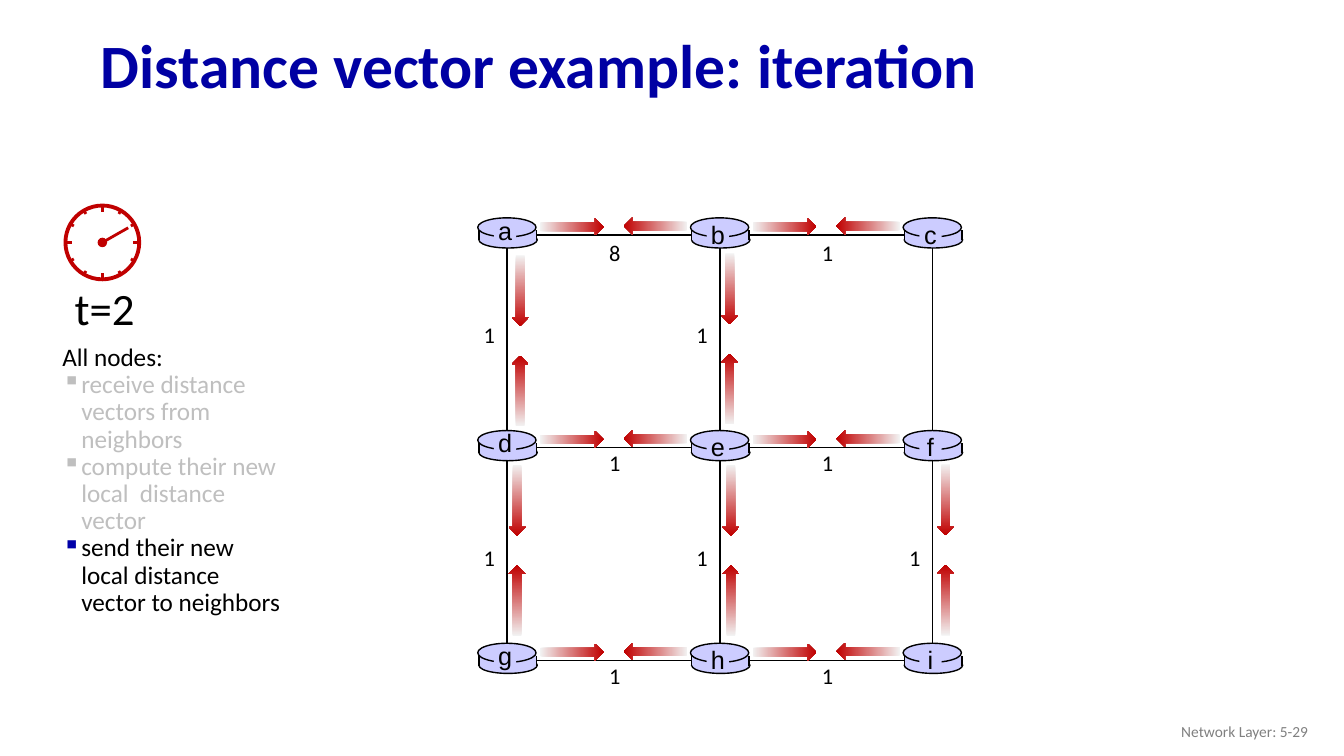
from math import cos, radians, sin

from lxml import etree
from pptx import Presentation
from pptx.dml.color import RGBColor
from pptx.enum.shapes import MSO_CONNECTOR, MSO_SHAPE, MSO_SHAPE_TYPE
from pptx.enum.text import MSO_ANCHOR, MSO_AUTO_SIZE, PP_ALIGN
from pptx.oxml.ns import qn
from pptx.util import Cm, Pt

BLACK = RGBColor(0, 0, 0)
NAVY = RGBColor(0x00, 0x00, 0xA3)
BLUE = RGBColor(0x00, 0x00, 0xA8)
RED = RGBColor(0xC0, 0x00, 0x00)
LILAC = RGBColor(0xCC, 0xCC, 0xFF)
PALE = RGBColor(0xF2, 0xF2, 0xF2)
SILVER = RGBColor(0xBF, 0xBF, 0xBF)
GRAY = RGBColor(0x80, 0x80, 0x80)

prs = Presentation()
prs.slide_width, prs.slide_height = Cm(33.87), Cm(19.05)
s = prs.slides.add_slide(prs.slide_layouts[5])


def write(p, text, size=18, font="Calibri", color=BLACK, bold=False,
          align=PP_ALIGN.LEFT, spacing=None):
    p.alignment = align
    p.line_spacing = spacing
    r = p.add_run()
    r.text = text
    r.font.size = Pt(size)
    r.font.name = font
    r.font.bold = bold
    r.font.color.rgb = color


def draw(kind, x, y, w, h, fill=None, line=None, width=1):
    sp = s.shapes.add_shape(kind, Cm(x), Cm(y), Cm(w), Cm(h))
    sp.shadow.inherit = False
    if fill is None:
        sp.fill.background()
    else:
        sp.fill.solid()
        sp.fill.fore_color.rgb = fill
    if line is None:
        sp.line.fill.background()
    else:
        sp.line.color.rgb = line
        sp.line.width = Pt(width)
    return sp


title = s.shapes.title
title.left, title.top, title.width, title.height = Cm(2.29), Cm(0.48), Cm(29.21), Cm(2.49)
tf = title.text_frame
tf.auto_size = MSO_AUTO_SIZE.NONE
tf.vertical_anchor = MSO_ANCHOR.MIDDLE
for text, color in (("Distance vector example: ", NAVY), ("iteration", BLUE)):
    write(tf.paragraphs[0], text, size=44, color=color, bold=True, spacing=0.9)

LEFT, TOP, PITCH = 12.78, 5.92, 5.36
cols = [LEFT + PITCH * i for i in range(3)]
rows = [TOP + PITCH * i for i in range(3)]

frame = draw(MSO_SHAPE.RECTANGLE, LEFT, TOP, 2 * PITCH, 2 * PITCH, line=BLACK)
for start, end in ((2, 0), (1, 3)):
    link = s.shapes.add_connector(MSO_CONNECTOR.STRAIGHT, 0, 0, 0, 0)
    link.begin_connect(frame, start)
    link.end_connect(frame, end)
    link.line.color.rgb = BLACK
    link.line.width = Pt(1)

strokes = []
labels = []
for i, name in enumerate("abcdefghi"):
    x, y = cols[i % 3], rows[i // 3]
    draw(MSO_SHAPE.OVAL, x - 0.71, y - 0.08, 1.47, 0.41, LILAC, BLACK)
    draw(MSO_SHAPE.RECTANGLE, x - 0.71, y - 0.12, 1.45, 0.25, LILAC)
    draw(MSO_SHAPE.OVAL, x - 0.74, y - 0.43, 1.47, 0.48, LILAC, BLACK)
    draw(MSO_SHAPE.RECTANGLE, x - 0.33, y - 0.3, 0.56, 0.51, LILAC)
    for side in (x - 0.71, x + 0.74):
        strokes.append((side, y - 0.12, side, y + 0.14, BLACK, 1))
    lift = 0.63 if i % 3 == 0 else 0.53
    labels.append((name, x - 0.48, y - lift, 0.86, 1.02,
                   dict(font="Arial", align=PP_ALIGN.CENTER)))

arrows = []
for j, y in enumerate(rows):
    for i, x in enumerate(cols[:2]):
        arrows += [(x + 1.63, y - 0.2, 1.6, 0), (x + 3.74, y - 0.22, 1.6, 180)]
        cost = "8" if i == j == 0 else "1"
        labels.append((cost, x + 2.32, y - (0.02 if j == 0 else 0.09), 0.84, 0.94, dict(size=16)))

for i, j, dx, dy in ((0, 0, 0.33, 1.41), (1, 0, 0.25, 1.36), (0, 1, 0.25, 1.33),
                     (1, 1, 0.28, 1.33), (2, 1, 0.33, 1.32)):
    x, y = cols[i], rows[j]
    arrows += [(x + dx, y + dy, 1.78, 90), (x + dx, y + dy + 2.53, 1.78, 270)]
    labels.append(("1", x - 0.84, y + (2.06 if j == 0 else 2.3), 0.84, 0.94, dict(size=16)))

for x, y, length, angle in arrows:
    arrow = draw(MSO_SHAPE.RIGHT_ARROW, x - length / 2, y - 0.22, length, 0.43)
    arrow.rotation = angle
    arrow.fill.gradient()
    arrow.fill.gradient_angle = 0
    for stop, color in zip(arrow.fill.gradient_stops, (PALE, RED)):
        stop.color.rgb = color

CX, CY = 2.58, 6.11
draw(MSO_SHAPE.OVAL, CX - 0.93, CY - 0.93, 1.86, 1.86, line=RED, width=2.75)
draw(MSO_SHAPE.OVAL, CX - 0.12, CY - 0.12, 0.24, 0.24, RED)
for angle in range(0, 360, 30):
    inner = 0.77 if angle % 90 == 0 else 0.83
    c, d = cos(radians(angle)), sin(radians(angle))
    strokes.append((CX + inner * c, CY + inner * d, CX + 0.95 * c, CY + 0.95 * d, RED, 2))
strokes.append((3.23, 5.74, CX, CY, RED, 2))

for x1, y1, x2, y2, color, width in strokes:
    link = s.shapes.add_connector(MSO_CONNECTOR.STRAIGHT, Cm(x1), Cm(y1), Cm(x2), Cm(y2))
    link.line.color.rgb = color
    link.line.width = Pt(width)
for sp in s.shapes:
    if sp.shape_type == MSO_SHAPE_TYPE.LINE:
        etree.SubElement(sp.element.spPr, qn("a:effectLst"))

labels.append(("t=2", 1.63, 6.96, 2.4, 1.63, dict(size=32)))
labels.append(("Network Layer: 5-29", 25.6, 17.91, 7.62, 1.02,
               dict(size=11, color=GRAY, align=PP_ALIGN.RIGHT)))
labels.append(("All nodes:", 1.32, 8.56, 6.1, 7.19, dict(spacing=0.9)))
for text, x, y, w, h, style in labels:
    tf = s.shapes.add_textbox(Cm(x), Cm(y), Cm(w), Cm(h)).text_frame
    tf.word_wrap = True
    tf.vertical_anchor = MSO_ANCHOR.MIDDLE if style.get("size") == 11 else MSO_ANCHOR.TOP
    write(tf.paragraphs[0], text, **style)

for text, color, bullet in (
        ("receive distance vectors from neighbors", SILVER, SILVER),
        ("compute their new local  distance vector", SILVER, SILVER),
        ("send their new local distance vector to neighbors", BLACK, BLUE)):
    p = tf.add_paragraph()
    pPr = p._p.get_or_add_pPr()
    pPr.set("marL", str(Cm(0.48)))
    pPr.set("indent", str(-Cm(0.48)))
    buClr = etree.SubElement(pPr, qn("a:buClr"))
    etree.SubElement(buClr, qn("a:srgbClr"), val=str(bullet))
    etree.SubElement(pPr, qn("a:buChar"), char="▪")
    write(p, text, color=color, spacing=0.9)

prs.save("out.pptx")
